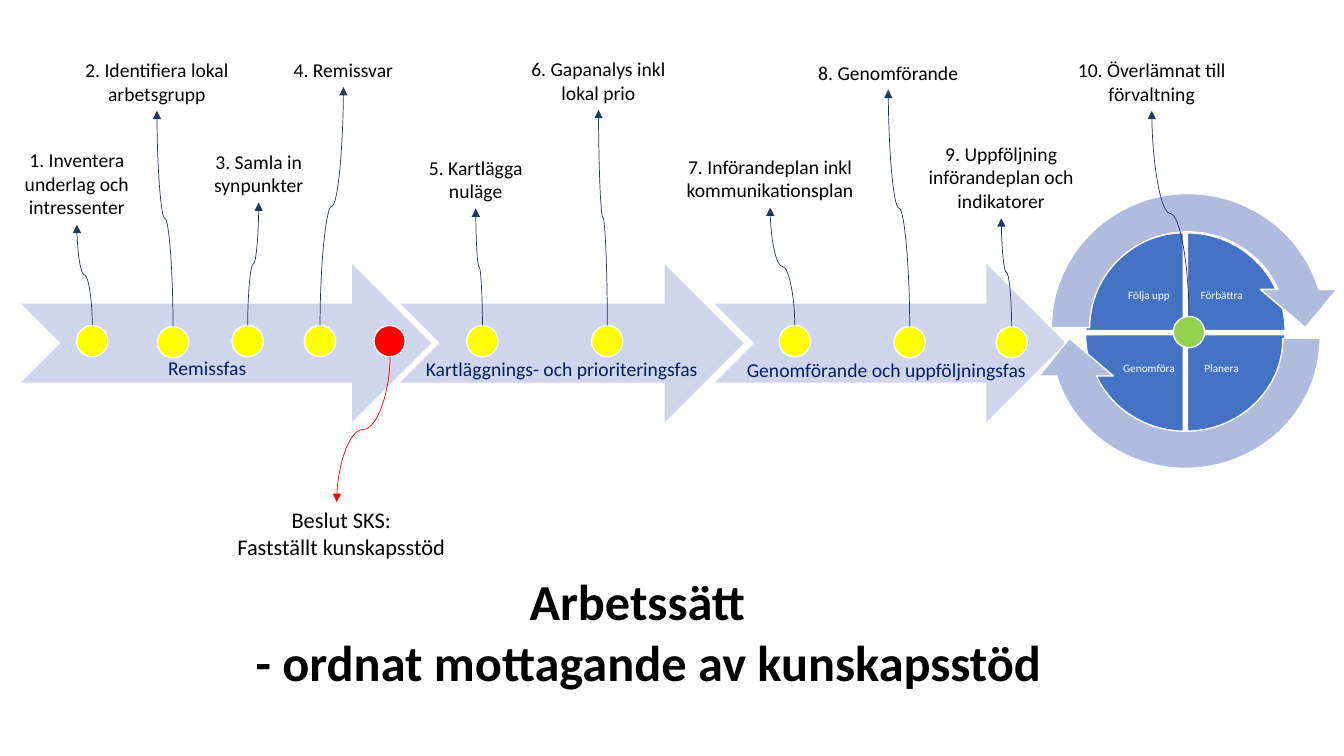
from dataclasses import dataclass

from lxml import etree
from pptx import Presentation, util as u
from pptx.dml.color import RGBColor
from pptx.enum import shapes, text
from pptx.oxml.ns import qn

SHAPE = shapes.MSO_SHAPE


@dataclass(frozen=True)
class Theme:
    font: str = "Calibri"
    ink: str = "000000"
    white: str = "FFFFFF"
    phase: str = "CFD5EA"
    phase_ink: str = "002060"
    step: str = "FFFF00"
    decision: str = "FF0000"
    handover: str = "92D050"
    pointer: str = "203864"
    wedge: str = "4472C4"
    cycle: str = "B0BCDE"
    title_size: float = 36
    decision_size: float = 16
    label_size: float = 14
    wedge_size: float = 8


class Slide:
    """Draws on one slide; every length is in points."""

    DOT = 22.4

    def __init__(self, prs, theme):
        self.s = prs.slides.add_slide(prs.slide_layouts[6])
        self.t = theme

    def shape(self, kind, x, y, w, h, fill, line=None, rotation=0):
        sp = self.s.shapes.add_shape(kind, *map(u.Pt, (x, y, w, h)))
        sp.shadow.inherit = False
        sp.rotation = rotation
        sp.fill.solid()
        sp.fill.fore_color.rgb = RGBColor.from_string(fill)
        if line:
            sp.line.color.rgb = RGBColor.from_string(line)
            sp.line.width = u.Pt(1)
        else:
            sp.line.fill.background()
        return sp

    def dot(self, cx, cy, fill):
        d = self.DOT
        self.shape(SHAPE.OVAL, cx - d / 2, cy - d / 2, d, d, fill, self.t.white)

    def text(self, lines, x, y, w, h, size, color, bold=False, spacing=None, frame=None):
        sp = self.s.shapes.add_textbox(*map(u.Pt, (x, y, w, h)))
        tf = sp.text_frame
        tf.word_wrap = True
        fit = {"auto_size": text.MSO_AUTO_SIZE.SHAPE_TO_FIT_TEXT}
        for name, value in (frame or fit).items():
            setattr(tf, name, value)
        font = {"name": self.t.font, "size": u.Pt(size), "bold": bold}
        for i, line in enumerate(lines):
            p = tf.add_paragraph() if i else tf.paragraphs[0]
            p.alignment = text.PP_ALIGN.CENTER
            p.line_spacing = spacing
            r = p.add_run()
            r.text = line
            for name, value in font.items():
                setattr(r.font, name, value)
            r.font.color.rgb = RGBColor.from_string(color)
        return tf

    def curve(self, x1, y1, x2, y2, color):
        """S-curve that leaves and arrives vertically: a turned level connector."""
        cx, cy = (x1 + x2) / 2, (y1 + y2) / 2
        run = abs(y2 - y1) / 2
        up = y2 < y1
        rise = (x2 - x1) / 2 * (1 if up else -1)
        ends = (cx - run, cy - rise, cx + run, cy + rise)
        c = self.s.shapes.add_connector(shapes.MSO_CONNECTOR.CURVE, *map(u.Pt, ends))
        c.line.color.rgb = RGBColor.from_string(color)
        c.line.width = u.Pt(0.5)
        sp_pr = c.element.spPr
        sp_pr.find(qn("a:xfrm")).set("rot", str((270 if up else 90) * 60000))
        etree.SubElement(sp_pr.find(qn("a:ln")), qn("a:tailEnd"), type="triangle")
        etree.SubElement(sp_pr, qn("a:effectLst"))

    def phase(self, name, x, w, label_x, label_y, label_w):
        t = self.t
        self.shape(SHAPE.NOTCHED_RIGHT_ARROW, x, 188.6, w, 113, t.phase)
        self.text([name], label_x, label_y, label_w, 24.4, t.label_size, t.phase_ink)

    def step(self, label, rows, w, tip, dot, fill):
        """Dot, pointer, and a label standing on the pointer's tip."""
        t = self.t
        self.dot(*dot, fill)
        self.curve(dot[0], dot[1] - self.DOT / 2, *tip, t.pointer)
        h = 7.4 + 17 * rows
        self.text([label], tip[0] - w / 2, tip[1] - h, w, h, t.label_size, t.ink)

    def wheel(self, cx, cy, labels):
        """Four wedges clockwise from top left, inside two circular arrows."""
        t, gap, wedge, box = self.t, 1.44, 69.8, 49
        corners = [(-1, -1), (1, -1), (1, 1), (-1, 1)]
        inset = {f"margin_{side}": u.Pt(4.3) for side in ("left", "top", "right", "bottom")}
        inset["vertical_anchor"] = text.MSO_ANCHOR.MIDDLE
        for i, (label, (dx, dy)) in enumerate(zip(labels, corners)):
            def place(size):
                return [c + gap if d > 0 else c - gap - size
                        for c, d in ((cx, dx), (cy, dy))] + [size, size]
            self.shape(SHAPE.PIE_WEDGE, *place(wedge), t.wedge, t.white, 90 * i)
            self.text([label], *place(box), t.wedge_size, t.white, spacing=0.9, frame=inset)
        for x, y, w, h, turn in [(737.3, 124.6, 222.5, 218.9, 0),
                                 (737.3, 135.4, 218.9, 212.4, 180)]:
            self.shape(SHAPE.CIRCULAR_ARROW, x, y, w, h, t.cycle, t.white, turn)


PHASES = [  # name, arrow x and width, label x, y and width
    ("Remissfas", 15.1, 293, 56.2, 250.6, 183.6),
    ("Kartläggnings- och prioriteringsfas", 285.8, 245.5, 278.6, 251.3, 245.5),
    ("Genomförande och uppföljningsfas", 510.5, 250.6, 505.4, 252, 255.6),
]
STEPS = [  # label, rows, width, pointer tip, dot centre
    ("1. Inventera underlag och intressenter", 3, 120.2, (54.9, 160.6), (65.9, 243.7)),
    ("2. Identifiera lokal arbetsgrupp", 2, 120.2, (112.1, 79.2), (123.6, 244.5)),
    ("3. Samla in synpunkter", 2, 88.6, (184.8, 144.7), (176.9, 243.7)),
    ("4. Remissvar", 1, 88.6, (245.3, 62.2), (228.6, 243.7)),
    ("5. Kartlägga nuläge", 2, 85, (339.8, 149), (344.6, 243.7)),
    ("6. Gapanalys inkl lokal prio", 2, 120.2, (427.5, 78.5), (433.8, 243.7)),
    ("7. Införandeplan inkl kommunikationsplan", 2, 136.8, (550.1, 148.3), (567.7, 243.7)),
    ("8. Genomförande", 1, 120.2, (634.5, 64.1), (649.8, 244.5)),
    ("9. Uppföljning införandeplan och indikatorer", 3, 120.2, (715.2, 156), (722.6, 244.5)),
    ("10. Överlämnat till förvaltning", 2, 120.2, (822.7, 79.2), (849.3, 237.2)),
]


def main():
    prs = Presentation()
    prs.slide_width, prs.slide_height = u.Pt(960), u.Pt(540)
    t = Theme()
    s = Slide(prs, t)

    # Phase arrows and the improvement wheel
    for phase in PHASES:
        s.phase(*phase)
    s.wheel(846.7, 237.6, ["Följa upp", "Förbättra", "Planera", "Genomföra"])

    # Numbered steps; the last one hands over to the wheel
    for step in STEPS:
        s.step(*step, t.handover if step is STEPS[-1] else t.step)

    # Decision point
    s.dot(278.3, 243.7, t.decision)
    s.curve(278.6, 254.9, 240.5, 358.6, t.decision)
    s.text(["Beslut SKS:", "Fastställt kunskapsstöd"], 160.6, 357.8, 166.3, 46,
           t.decision_size, t.ink)

    # Title, second line indented
    tf = s.text(["Arbetssätt", "- ordnat mottagande av kunskapsstöd"],
                124.4, 403.9, 661.8, 94.3, t.title_size, t.ink, bold=True)
    p_pr = tf.paragraphs[1].runs[0].font
    tf.paragraphs[1].alignment = text.PP_ALIGN.CENTER
    p_pr = tf.paragraphs[1]._p.get_or_add_pPr()
    p_pr.set("marL", str(u.Pt(16)))

    prs.save("out.pptx")


if __name__ == "__main__":
    main()
